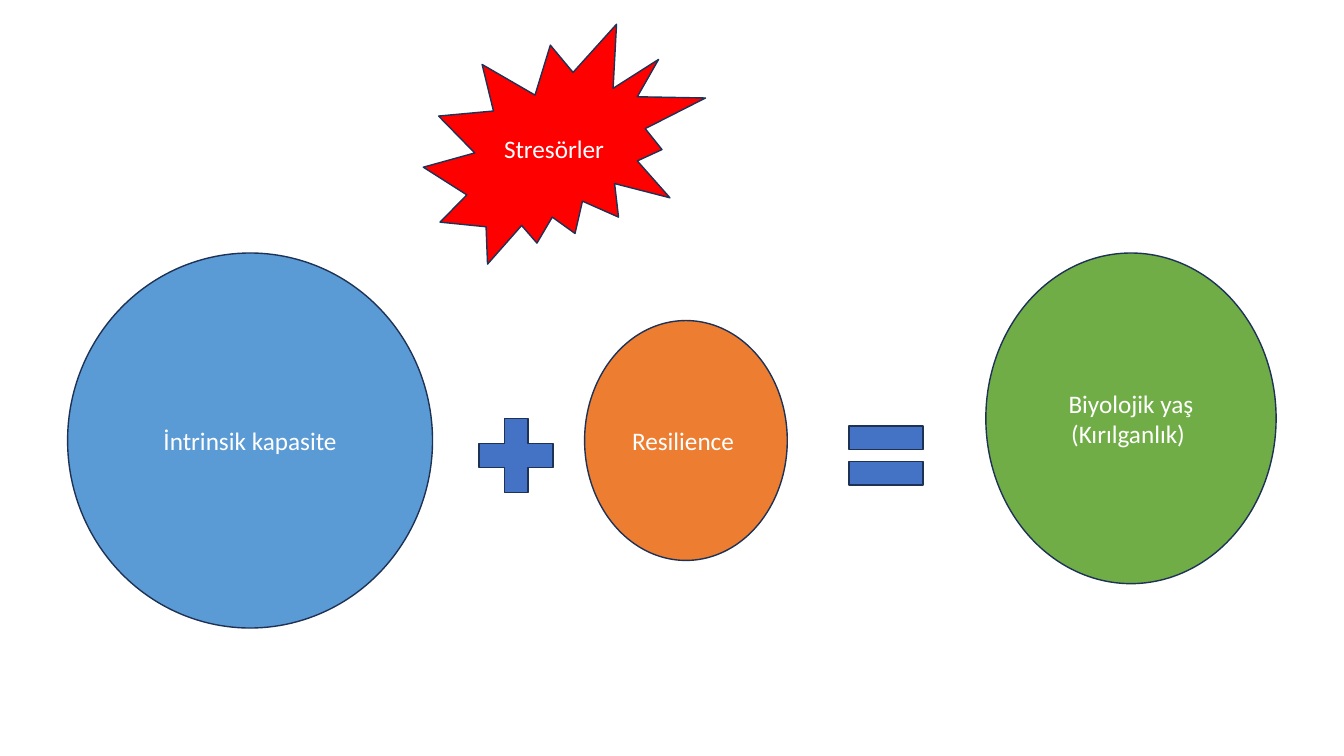
from pptx import Presentation
from pptx.dml.color import RGBColor
from pptx.enum.shapes import MSO_SHAPE
from pptx.enum.text import MSO_ANCHOR, PP_ALIGN
from pptx.util import Inches, Pt

CIRCLE = MSO_SHAPE.FLOWCHART_CONNECTOR
BURST = MSO_SHAPE.EXPLOSION2
PLUS = MSO_SHAPE.MATH_PLUS
EQUAL = MSO_SHAPE.MATH_EQUAL
MIDDLE = MSO_ANCHOR.MIDDLE
CENTER = PP_ALIGN.CENTER

SLIDE_WIDTH = Inches(13.33)
SLIDE_HEIGHT = Inches(7.5)
OUTLINE = "1E3256"
OPERATOR_BLUE = "4472C4"
OPERATOR_TOP = 53.6
OPERATOR_SIZE = (7.5, 13.33)
CIRCLE_TOP = 33.47


def color(hex_code):
    return RGBColor.from_string(hex_code)


def across(percent):
    return round(SLIDE_WIDTH * percent / 100)


def down(percent):
    return round(SLIDE_HEIGHT * percent / 100)


def add_figure(slide, preset, left, top, size, fill):
    width, height = size
    figure = slide.shapes.add_shape(
        preset, across(left), down(top), across(width), down(height))
    figure.shadow.inherit = False
    figure.fill.solid()
    figure.fill.fore_color.rgb = color(fill)
    figure.line.color.rgb = color(OUTLINE)
    figure.line.width = Pt(1)
    return figure


def add_concept(slide, preset, left, top, size, fill, lines):
    frame = add_figure(slide, preset, left, top, size, fill).text_frame
    frame.word_wrap = True
    frame.vertical_anchor = MIDDLE
    frame.text = "\n".join(lines)
    for paragraph in frame.paragraphs:
        paragraph.alignment = CENTER
        for name, value in {"name": "Calibri", "size": Pt(18)}.items():
            setattr(paragraph.font, name, value)
        paragraph.font.color.rgb = color("FFFFFF")


def add_operator(slide, preset, left):
    add_figure(slide, preset, left, OPERATOR_TOP, OPERATOR_SIZE, OPERATOR_BLUE)


def main():
    deck = Presentation()
    deck.slide_width = SLIDE_WIDTH
    deck.slide_height = SLIDE_HEIGHT
    slide = deck.slides.add_slide(deck.slide_layouts[6])

    add_concept(slide, CIRCLE, 5.03, CIRCLE_TOP, (27.15, 49.6), "5B9BD5",
                ["İntrinsik kapasite"])
    add_concept(slide, CIRCLE, 43.5, 42.4, (15.08, 31.73), "ED7D31",
                ["Resilience "])
    add_operator(slide, PLUS, 34.65)
    add_concept(slide, BURST, 31.5, 3.2, (21, 31.73), "FF0000",
                ["Stresörler"])
    add_operator(slide, EQUAL, 62.18)
    add_concept(slide, CIRCLE, 73.35, CIRCLE_TOP, (21.6, 43.73), "70AD47",
                ["Biyolojik yaş", "(Kırılganlık) "])

    deck.save("out.pptx")


if __name__ == "__main__":
    main()
